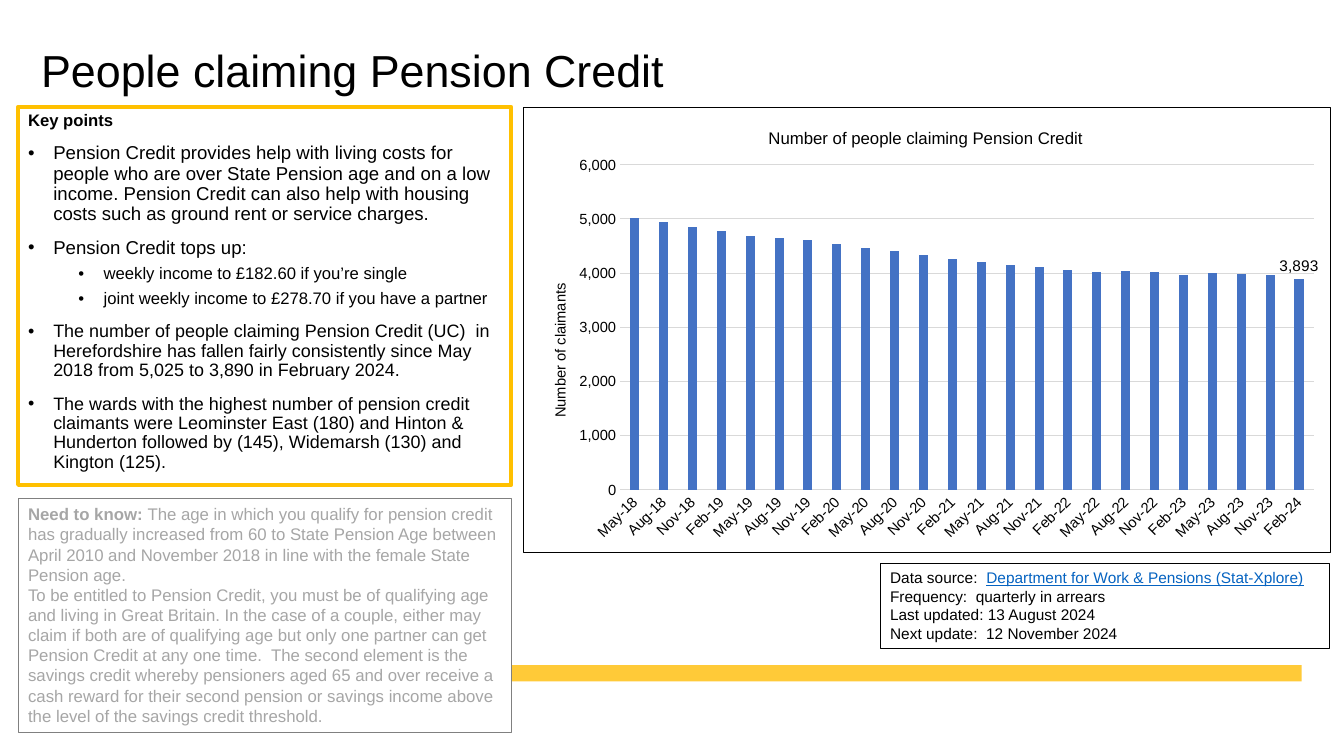
from lxml.etree import SubElement
from pptx import Presentation
from pptx.chart.data import CategoryChartData
from pptx.dml.color import RGBColor
from pptx.enum.chart import XL_CHART_TYPE, XL_LABEL_POSITION, XL_TICK_MARK
from pptx.enum.shapes import MSO_SHAPE
from pptx.enum.text import MSO_ANCHOR
from pptx.oxml import parse_xml
from pptx.oxml.ns import nsdecls, qn
from pptx.util import Pt

PX = 9144  # 100 px to the inch
BLACK, WHITE, GREY, PALE = "000000", "FFFFFF", "A6A6A6", "D9D9D9"

KEYS = [
    (0, 13.3, "Pension Credit provides help with living costs for people who are over State "
     "Pension age and on a low income. Pension Credit can also help with housing costs such "
     "as ground rent or service charges."),
    (0, 13.3, "Pension Credit tops up:"),
    (1, 11.9, "weekly income to £182.60 if you’re single"),
    (1, 11.9, "joint weekly income to £278.70 if you have a partner"),
    (0, 12.8, "The number of people claiming Pension Credit (UC)  in Herefordshire has fallen "
     "fairly consistently since May 2018 from 5,025 to 3,890 in February 2024."),
    (0, 12.8, "The wards with the highest number of pension credit claimants were Leominster "
     "East (180) and Hinton & Hunderton followed by (145), Widemarsh (130) and Kington (125)."),
]
NEED = ("The age in which you qualify for pension credit has gradually increased from 60 to "
        "State Pension Age between April 2010 and November 2018 in line with the female State "
        "Pension age.")
RULES = ("To be entitled to Pension Credit, you must be of qualifying age and living in Great "
         "Britain. In the case of a couple, either may claim if both are of qualifying age but "
         "only one partner can get Pension Credit at any one time.  The second element is the "
         "savings credit whereby pensioners aged 65 and over receive a cash reward for their "
         "second pension or savings income above the level of the savings credit threshold.")
CLAIMS = [5025, 4940, 4860, 4774, 4693, 4643, 4611, 4532, 4466, 4404, 4326, 4266,
          4208, 4151, 4120, 4060, 4014, 4031, 4019, 3971, 4001, 3986, 3960, 3893]
MONTHS = ["Feb", "May", "Aug", "Nov"]
DATES = [f"{MONTHS[i % 4]}-{18 + i // 4}" for i in range(1, len(CLAIMS) + 1)]


def rgb(code):
    return RGBColor.from_string(code)


def place(node, spot, **parts):
    """Give a chart part a manual layout, in fractions of the chart."""
    old = node.find(qn("c:layout"))
    if old is not None:
        node.remove(old)
    layout = parse_xml(f"<c:layout {nsdecls('c')}><c:manualLayout/></c:layout>")
    if "w" in parts:
        SubElement(layout[0], qn("c:layoutTarget"), val="inner")
    for key in "xy":
        SubElement(layout[0], qn(f"c:{key}Mode"), val="edge")
    for key, val in parts.items():
        SubElement(layout[0], qn(f"c:{key}"), val=str(val))
    node.insert(spot, layout)


class Deck:
    def __init__(self, wide, high):
        self.prs = Presentation()
        self.prs.slide_width, self.prs.slide_height = wide * PX, high * PX
        self.slide = self.prs.slides.add_slide(self.prs.slide_layouts[6])
        self.face = "Arial"

    def font(self, font, size, color=BLACK, bold=False):
        font.name, font.size, font.bold = self.face, Pt(size), bold
        font.color.rgb = rgb(color)

    def bar(self, box, fill):
        shape = self.slide.shapes.add_shape(MSO_SHAPE.RECTANGLE, *[n * PX for n in box])
        shape.shadow.inherit = False
        shape.fill.solid()
        shape.fill.fore_color.rgb = rgb(fill)
        shape.line.fill.background()

    def panel(self, box, line=None, width=0.75, fill=None):
        shape = self.slide.shapes.add_textbox(*[n * PX for n in box])
        if fill:
            shape.fill.solid()
            shape.fill.fore_color.rgb = rgb(fill)
        if line:
            shape.line.color.rgb = rgb(line)
            shape.line.width = Pt(width)
        shape.text_frame.word_wrap = True
        return shape.text_frame

    def para(self, frame, text, size, color=BLACK, bold=False):
        para = frame.paragraphs[0]
        if para.runs:
            para = frame.add_paragraph()
        para.text = text
        self.font(para.runs[0].font, size, color, bold)
        return para

    def more(self, para, text, size, color):
        run = para.add_run()
        run.text = text
        self.font(run.font, size, color)
        return run

    def bullet(self, frame, level, size, text):
        para = self.para(frame, text, size)
        para.level = level
        props = para._p.get_or_add_pPr()
        props.set("marL", str((25 + 50 * level) * PX))
        props.set("indent", str(-25 * PX))
        SubElement(props, qn("a:buFont"), typeface="Arial")
        SubElement(props, qn("a:buChar"), char="•")
        para.line_spacing = 0.9
        para.space_before = Pt(5 if level else 10)

    def name(self, part, text, size, **spot):
        """Set the title of the chart or of an axis."""
        para = part.text_frame.paragraphs[0]
        para.text = text
        self.font(para.runs[0].font, size)
        place(part._element, 1, **spot)

    def axis(self, axis):
        axis.major_tick_mark = axis.minor_tick_mark = XL_TICK_MARK.NONE
        self.font(axis.tick_labels.font, 10.5)

    def chart(self, box, title, side):
        data = CategoryChartData(number_format="#,##0")
        data.categories = DATES
        data.add_series("Series 1", CLAIMS)
        chart = self.slide.shapes.add_chart(
            XL_CHART_TYPE.COLUMN_CLUSTERED, *[n * PX for n in box], data).chart
        self.font(chart.font, 11)
        chart.has_legend = False
        chart.has_title = True
        self.name(chart.chart_title, title, 12, x=0.3, y=0.04)

        dates, vals = chart.category_axis, chart.value_axis
        self.axis(dates)
        dates.format.line.color.rgb = rgb(PALE)
        dates.format.line.width = Pt(0.75)
        dates._element.find(qn("c:txPr")).find(qn("a:bodyPr")).set("rot", "-2700000")
        self.axis(vals)
        vals.minimum_scale, vals.maximum_scale, vals.major_unit = 0, 6000, 1000
        vals.tick_labels.number_format = "#,##0"
        vals.tick_labels.number_format_is_linked = False
        vals.format.line.fill.background()
        vals.major_gridlines.format.line.color.rgb = rgb(PALE)
        vals.major_gridlines.format.line.width = Pt(0.75)
        self.name(vals.axis_title, side, 10.5, x=0.03, y=0.39)

        plot = chart.plots[0]
        plot.gap_width, plot.overlap, plot.vary_by_categories = 219, -27, False
        bars = plot.series[0]
        bars.format.fill.solid()
        bars.format.fill.fore_color.rgb = rgb("4472C4")
        last = bars.points[len(CLAIMS) - 1].data_label
        self.font(last.font, 11)
        last.position = XL_LABEL_POSITION.OUTSIDE_END

        root = chart._chartSpace
        place(root.chart.plotArea, 0, x=0.12, y=0.13, w=0.86, h=0.73)
        root.chart.addnext(parse_xml(
            f"<c:spPr {nsdecls('c', 'a')}>"
            f'<a:solidFill><a:srgbClr val="{WHITE}"/></a:solidFill>'
            f'<a:ln w="{Pt(0.25)}"><a:solidFill><a:srgbClr val="{BLACK}"/></a:solidFill></a:ln>'
            "</c:spPr>"))


def main():
    deck = Deck(1333, 750)
    deck.bar((31, 660, 1260, 16), "FFCA38")

    head = deck.panel((31, 40, 1260, 65))
    head.vertical_anchor = MSO_ANCHOR.MIDDLE
    deck.para(head, "People claiming Pension Credit", 32).line_spacing = 0.9

    keys = deck.panel((18, 106, 489, 375), "FFC000", 3)
    deck.para(keys, "Key points", 11.9, bold=True).line_spacing = 0.9
    for level, size, text in KEYS:
        deck.bullet(keys, level, size, text)

    data = deck.panel((873, 559, 446, 84), BLACK, fill=WHITE)
    first = deck.para(data, "Data source:  ", 11)
    link = deck.more(first, "Department for Work & Pensions (Stat-Xplore)", 11, "0563C1")
    link.font.underline = True
    for text in ("Frequency:  quarterly in arrears", "Last updated: 13 August 2024",
                 "Next update:  12 November 2024"):
        deck.para(data, text, 11)

    need = deck.panel((18, 495, 489, 232), "808080", fill=WHITE)
    deck.more(deck.para(need, "Need to know: ", 12, GREY, True), NEED, 12, GREY)
    deck.para(need, RULES, 12, GREY)

    deck.chart((519, 106, 800, 442), "Number of people claiming Pension Credit",
               "Number of claimants")
    deck.prs.save("out.pptx")


if __name__ == "__main__":
    main()
